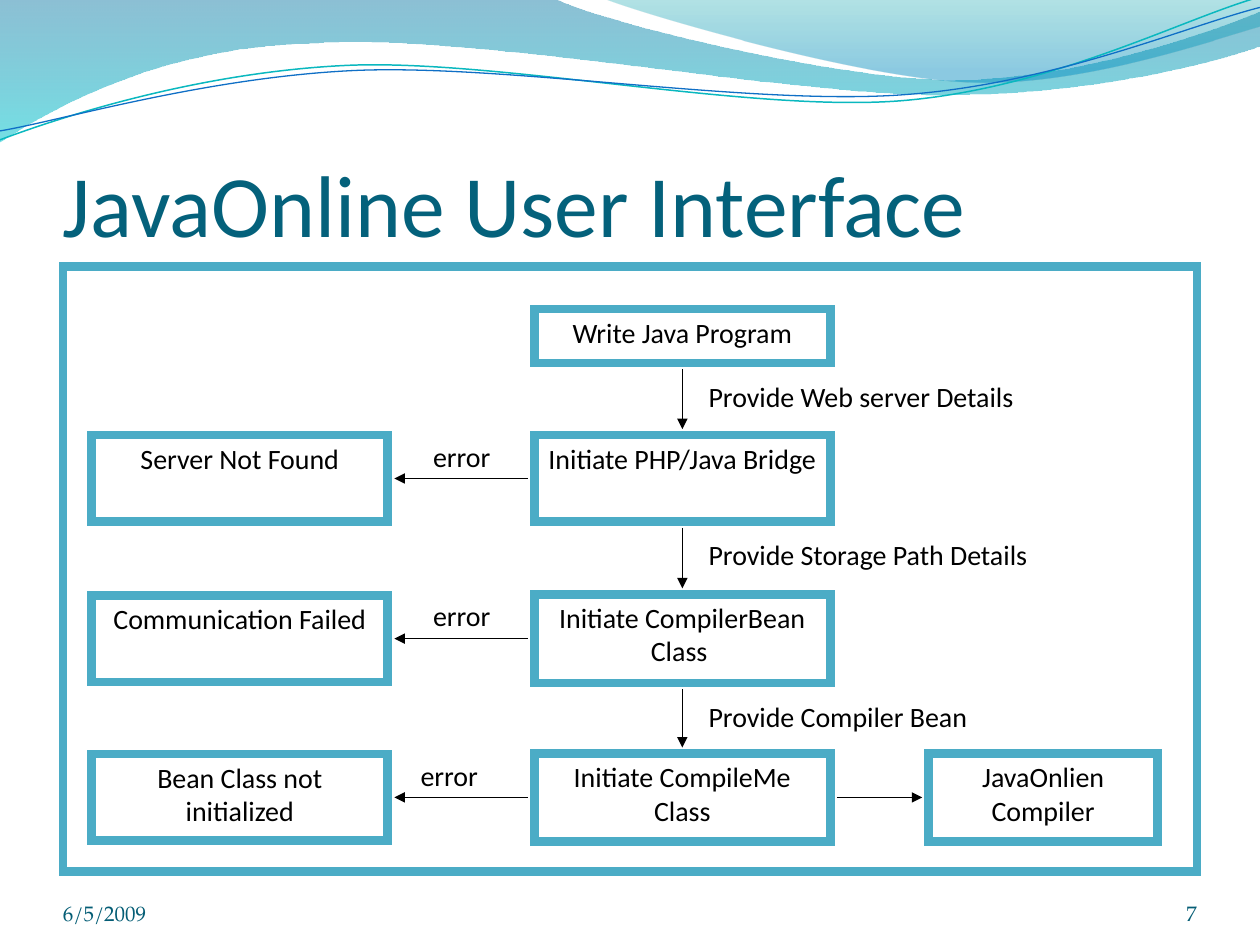
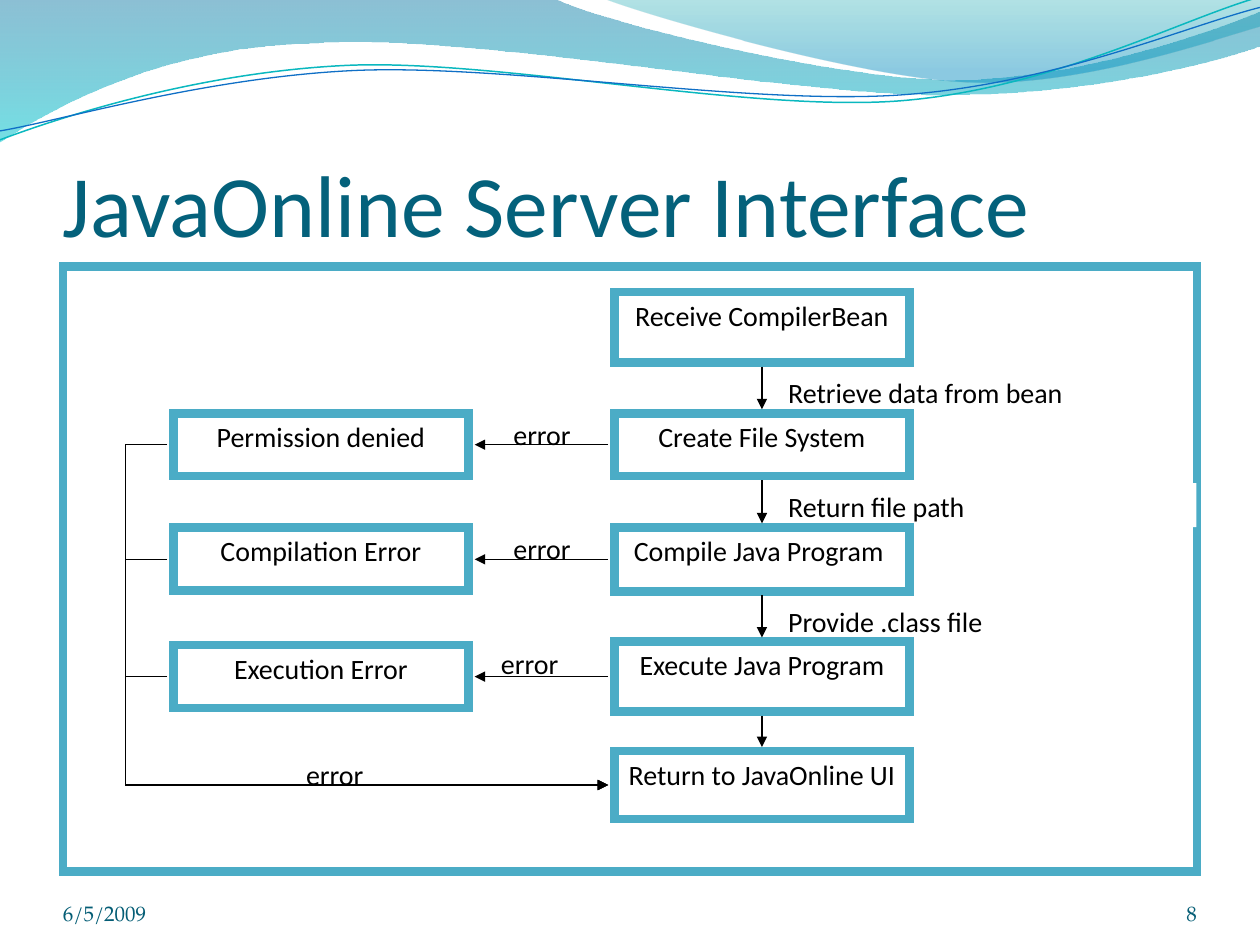
"""Build two flow-chart slides on the JavaOnline interfaces."""
from dataclasses import dataclass

import pptx
import pptx.dml.color
import pptx.enum.shapes
import pptx.enum.text
import pptx.oxml.ns
import pptx.util
from lxml import etree

Cm = pptx.util.Cm
Pt = pptx.util.Pt
qn = pptx.oxml.ns.qn
ALIGN = pptx.enum.text.PP_ALIGN
ANCHOR = pptx.enum.text.MSO_ANCHOR
CONNECTOR = pptx.enum.shapes.MSO_CONNECTOR
RECTANGLE = pptx.enum.shapes.MSO_SHAPE.RECTANGLE


@dataclass(frozen=True)
class Theme:
    title: str = "04617B"
    footer: str = "045D75"
    border: str = "4BACC6"
    ink: str = "000000"
    paper: str = "FFFFFF"
    font: str = "Calibri"
    footer_font: str = "TeX Gyre Pagella"
    title_size: float = 50
    body_size: float = 16
    footer_size: float = 12
    border_width: float = 5
    arrow_width: float = 0.75


@dataclass(frozen=True)
class Area:
    left: float
    top: float
    width: float
    height: float

    @property
    def right(self) -> float:
        return self.left + self.width

    @property
    def bottom(self) -> float:
        return self.top + self.height

    @property
    def center(self) -> float:
        return self.left + self.width / 2

    @property
    def middle(self) -> float:
        return self.top + self.height / 2

    def lengths(self) -> tuple:
        return Cm(self.left), Cm(self.top), Cm(self.width), Cm(self.height)


@dataclass(frozen=True)
class Wave:
    """Segments hold one point for a straight line or three for a curve."""
    start: tuple
    segments: tuple
    stops: tuple = ()
    color: str = ""
    weight: float = 0
    rotation: float = 0


@dataclass(frozen=True)
class Step:
    text: str
    top: float
    height: float
    handover: str = ""
    handover_width: float = 7.4
    failure: str = ""
    error_offset: float = 2.29


@dataclass(frozen=True)
class Flow:
    title: str
    number: str
    step_left: float
    failure_left: float
    box_width: float
    failure_height: float
    label_height: float
    label_gap: float
    step_gap: float
    steps: tuple
    result: str = ""
    failures_return: bool = False


THEME = Theme()
GAP = 0.13
BUS_OFFSET = 0.84
FRAME = Area(1.27, 5.38, 22.86, 12.19)
TITLE = Area(1.27, 1.96, 22.86, 3.18)
DATE = Area(1.27, 17.65, 5.92, 1.02)
NUMBER = Area(22.02, 17.65, 2.11, 1.02)
RESULT_LEFT, RESULT_WIDTH = 18.72, 4.62
RETURN_LABEL_LEFT = 5.92
ERROR_WIDTH = 2.06
ROW_TOP, ROW_PITCH = 8.77, 3.21

WAVES = (
    Wave((0, 0), (
        ((11.18, -0.03),),
        ((12.09, 0.43), (16.87, 1.6), (19.25, 1.6)),
        ((21.67, 1.6), (24.33, 0.66), (25.4, 0.23)),
        ((25.43, 0.91),),
        ((24.97, 1.12), (22.1, 1.93), (18.95, 1.91)),
        ((15.8, 1.91), (9.7, 0.71), (6.53, 0.86)),
        ((3.28, 0.91), (1.17, 2.11), (-0.03, 2.87)),
        ((0, 0),),
    ), stops=((0, "0074A1", 45), (1, "00C6CF", 55))),
    Wave((12.17, -0.03), (
        ((12.93, 0.28), (17.32, 1.57), (19.53, 1.65)),
        ((21.74, 1.75), (24.41, 0.81), (25.4, 0.53)),
        ((25.4, 0),),
        ((12.17, -0.03),),
    ), stops=((0, "00A1A9", 30), (0.8, "008BBF", 45))),
    Wave((-0.05, 2.22), (
        ((1.19, 1.82), (4.02, 1.04), (7.05, 1.05)),
        ((10.05, 1.07), (15.02, 2.37), (18.08, 2.29)),
        ((21.14, 2.2), (23.87, 0.91), (25.41, 0.55)),
    ), color="0AB8BF", weight=0.85, rotation=357.3),
    Wave((-0.04, 2.04), (
        ((1.16, 1.9), (4.18, 1.15), (7.2, 1.16)),
        ((10.25, 1.18), (15.13, 2.25), (18.18, 2.17)),
        ((21.21, 2.1), (23.93, 1.06), (25.45, 0.75)),
    ), color="0F6FC6", weight=0.75, rotation=357.3),
)

FLOWS = (
    Flow("JavaOnline User Interface", "7", 10.77, 1.85, 5.97, 1.75, 1.24, 0.2, 0.12, (
        Step("Write Java Program", 6.23, 1.09, "Provide Web server Details"),
        Step("Initiate PHP/Java Bridge", ROW_TOP, 1.75,
             "Provide Storage Path Details", 8.48, "Server Not Found"),
        Step("Initiate CompilerBean Class ", ROW_TOP + ROW_PITCH, 1.79,
             "Provide Compiler Bean", failure="Communication Failed"),
        Step("Initiate CompileMe Class", ROW_TOP + 2 * ROW_PITCH, 1.77,
             failure="Bean Class not initialized", error_offset=2.54),
    ), result="JavaOnlien Compiler"),
    Flow("JavaOnline Server Interface", "8", 12.39, 3.5, 5.94, 1.27, 0.89, 0.14, 0.08, (
        Step("Receive CompilerBean", 5.89, 1.42, "Retrieve data from bean"),
        Step("Create File System", 8.33, 1.27, "Return file path", 8.48, "Permission denied"),
        Step("Compile Java Program ", 10.63, 1.29, "Provide .class file",
             failure="Compilation Error"),
        Step("Execute Java Program", 12.93, 1.42, failure="Execution Error", error_offset=2.54),
        Step("Return to JavaOnline UI", 15.14, 1.37),
    ), failures_return=True),
)


def rgb(value: str) -> pptx.dml.color.RGBColor:
    return pptx.dml.color.RGBColor.from_string(value)


def write(shape, text: str, *, size: float = THEME.body_size, color: str = THEME.ink,
          font: str = THEME.font, align=ALIGN.LEFT, anchor=ANCHOR.TOP,
          after: float = 0, inset: bool = True) -> None:
    frame = shape.text_frame
    frame.word_wrap = True
    frame.vertical_anchor = anchor
    if not inset:
        frame.margin_left = frame.margin_right = frame.margin_top = frame.margin_bottom = 0
    paragraph = frame.paragraphs[0]
    paragraph.alignment = align
    paragraph.space_after = Pt(after)
    run = paragraph.add_run()
    run.text = text
    run.font.size = Pt(size)
    run.font.name = font
    run.font.color.rgb = rgb(color)


def draw_caption(slide, area: Area, text: str, **style) -> None:
    write(slide.shapes.add_textbox(*area.lengths()), text,
          anchor=ANCHOR.BOTTOM, inset=False, **style)


def draw_box(slide, area: Area, text: str = "", bordered: bool = True) -> None:
    box = slide.shapes.add_shape(RECTANGLE, *area.lengths())
    box.shadow.inherit = False
    box.fill.solid()
    box.fill.fore_color.rgb = rgb(THEME.paper)
    if bordered:
        box.line.color.rgb = rgb(THEME.border)
        box.line.width = Pt(THEME.border_width)
        etree.SubElement(box.element.spPr.find(qn("a:ln")), qn("a:miter"), lim="800000")
    else:
        box.line.fill.background()
    if text:
        write(box, text, align=ALIGN.CENTER if bordered else ALIGN.LEFT, after=10)


def draw_arrow(slide, start: tuple, end: tuple, bend: float = 0) -> None:
    kind = CONNECTOR.ELBOW if bend else CONNECTOR.STRAIGHT
    arrow = slide.shapes.add_connector(kind, *map(Cm, start + end))
    arrow.line.color.rgb = rgb(THEME.ink)
    arrow.line.width = Pt(THEME.arrow_width)
    properties = arrow.element.spPr
    etree.SubElement(properties.find(qn("a:ln")), qn("a:tailEnd"), type="triangle")
    etree.SubElement(properties, qn("a:effectLst"))
    if bend:
        ratio = round(100000 * bend / (end[0] - start[0]))
        guides = properties.find(qn("a:prstGeom")).find(qn("a:avLst"))
        etree.SubElement(guides, qn("a:gd"), name="adj1", fmla=f"val {ratio}")


def bend_segments(ribbon, segments: tuple) -> None:
    outline = next(ribbon.element.spPr.iter(qn("a:path")))
    corners = iter(outline.findall(qn("a:lnTo")))
    for segment in segments:
        steps = [next(corners) for _ in segment]
        if len(steps) == 3:
            curve = etree.Element(qn("a:cubicBezTo"))
            steps[0].addprevious(curve)
            for step in steps:
                curve.append(step[0])
                outline.remove(step)


def draw_wave(slide, wave: Wave) -> None:
    points = [(Cm(x), Cm(y)) for segment in wave.segments for x, y in segment]
    builder = slide.shapes.build_freeform(*map(Cm, wave.start))
    builder.add_line_segments(points, close=bool(wave.stops))
    ribbon = builder.convert_to_shape()
    bend_segments(ribbon, wave.segments)
    ribbon.rotation = wave.rotation
    ribbon.shadow.inherit = False
    if not wave.stops:
        ribbon.fill.background()
        ribbon.line.color.rgb = rgb(wave.color)
        ribbon.line.width = Pt(wave.weight)
        return
    ribbon.line.fill.background()
    ribbon.fill.gradient()
    ribbon.fill.gradient_angle = 270
    for stop, (position, color, _) in zip(ribbon.fill.gradient_stops, wave.stops):
        stop.position = position
        stop.color.rgb = rgb(color)
    tints = ribbon.element.spPr.find(qn("a:gradFill")).iter(qn("a:srgbClr"))
    for tint, (_, _, opacity) in zip(list(tints), wave.stops):
        etree.SubElement(tint, qn("a:alpha"), val=str(opacity * 1000))


def draw_background(slide, flow: Flow) -> None:
    for wave in WAVES:
        draw_wave(slide, wave)
    draw_caption(slide, TITLE, flow.title, size=THEME.title_size, color=THEME.title)
    footer = dict(size=THEME.footer_size, color=THEME.footer, font=THEME.footer_font)
    draw_caption(slide, DATE, "6/5/2009", **footer)
    draw_caption(slide, NUMBER, flow.number, align=ALIGN.RIGHT, **footer)
    draw_box(slide, FRAME)


def draw_flow(slide, flow: Flow) -> None:
    areas = [Area(flow.step_left, step.top, flow.box_width, step.height) for step in flow.steps]
    failures = [(step, area, Area(flow.failure_left, area.middle - flow.failure_height / 2,
                                  flow.box_width, flow.failure_height))
                for step, area in zip(flow.steps, areas) if step.failure]
    last = areas[-1]

    for step, area in zip(flow.steps, areas):
        if step.handover:
            draw_box(slide, Area(area.center + 0.28, area.bottom + flow.label_gap,
                                 step.handover_width, flow.label_height), step.handover, False)
    error_spots = [(area.left - step.error_offset, area.top - 0.03) for step, area, _ in failures]
    if flow.failures_return:
        error_spots.append((RETURN_LABEL_LEFT, last.top))
    for left, top in error_spots:
        draw_box(slide, Area(left, top, ERROR_WIDTH, flow.label_height), "error", False)

    for step, area in zip(flow.steps, areas):
        draw_box(slide, area, step.text)
    for above, below in zip(areas, areas[1:]):
        draw_arrow(slide, (above.center, above.bottom + flow.step_gap),
                   (below.center, below.top - flow.step_gap))
    for step, area, failure in failures:
        draw_box(slide, failure, step.failure)
        draw_arrow(slide, (area.left - GAP, area.middle), (failure.right + GAP, area.middle))
        if flow.failures_return:
            draw_arrow(slide, (failure.left - GAP, failure.middle),
                       (last.left - GAP, last.middle), bend=-BUS_OFFSET)
    if flow.result:
        result = Area(RESULT_LEFT, last.top, RESULT_WIDTH, last.height)
        draw_box(slide, result, flow.result)
        draw_arrow(slide, (last.right + GAP, last.middle), (result.left - GAP, result.middle))


def main() -> None:
    deck = pptx.Presentation()
    deck.slide_width, deck.slide_height = Cm(25.4), Cm(19.05)
    for flow in FLOWS:
        slide = deck.slides.add_slide(deck.slide_layouts[6])
        draw_background(slide, flow)
        draw_flow(slide, flow)
    deck.save("out.pptx")


if __name__ == "__main__":
    main()
